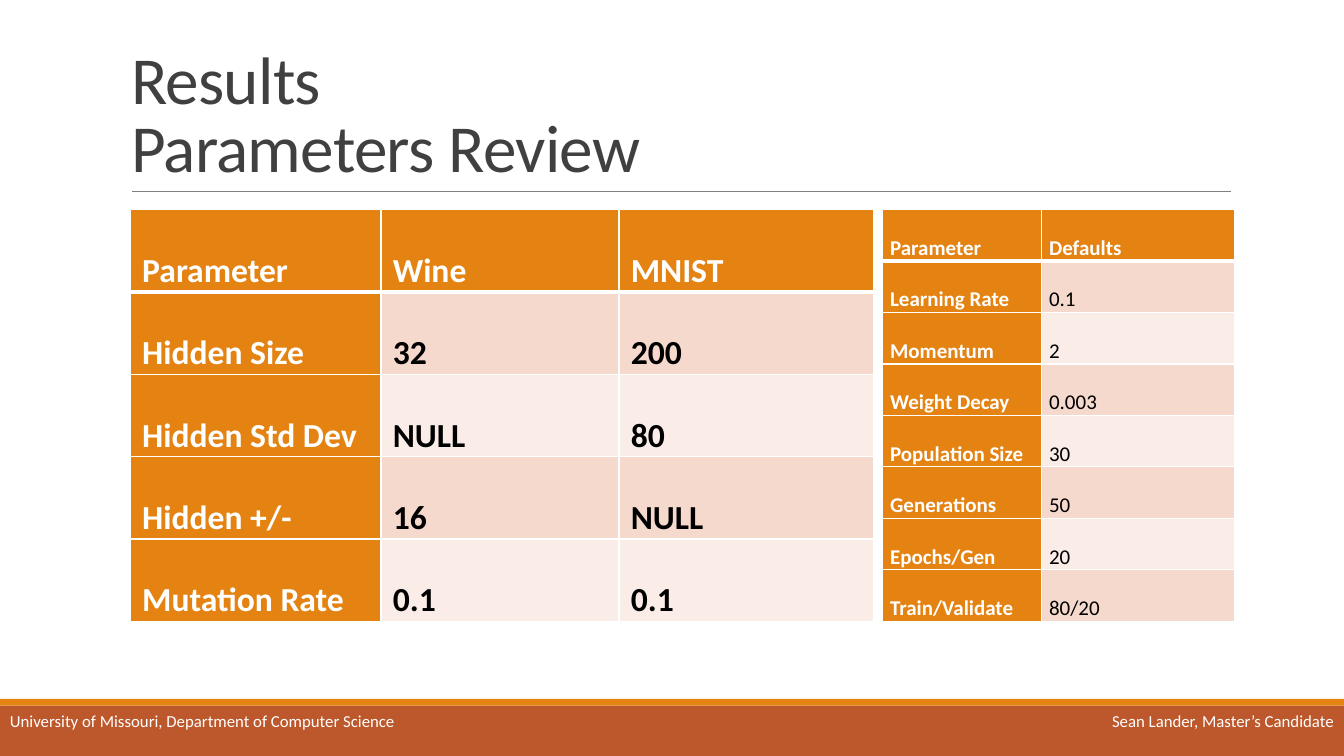
from lxml import etree
from pptx import Presentation
from pptx.dml.color import RGBColor
from pptx.enum.shapes import MSO_CONNECTOR, MSO_SHAPE
from pptx.enum.text import MSO_ANCHOR, MSO_AUTO_SIZE, PP_ALIGN
from pptx.oxml.ns import qn
from pptx.util import Pt

# Content
TITLE_LINES = ["Results", "Parameters Review"]
FOOTER_LEFT = "University of Missouri, Department of Computer Science"
FOOTER_RIGHT = "Sean Lander, Master’s Candidate"
TUNED_ROWS = [
    ("Parameter", "Wine", "MNIST"),
    ("Hidden Size", "32", "200"),
    ("Hidden Std Dev", "NULL", "80"),
    ("Hidden +/-", "16", "NULL"),
    ("Mutation Rate", "0.1", "0.1"),
]
DEFAULT_ROWS = [
    ("Parameter", "Defaults"),
    ("Learning Rate", "0.1"),
    ("Momentum", "2"),
    ("Weight Decay", "0.003"),
    ("Population Size", "30"),
    ("Generations", "50"),
    ("Epochs/Gen", "20"),
    ("Train/Validate", "80/20"),
]

# Style
FONT = "Calibri"
WHITE = RGBColor(0xFF, 0xFF, 0xFF)
BLACK = RGBColor(0x00, 0x00, 0x00)
TITLE_GRAY = RGBColor(0x40, 0x40, 0x40)
RULE_GRAY = RGBColor(0x80, 0x80, 0x80)
ORANGE = RGBColor(0xE4, 0x83, 0x12)
RUST = RGBColor(0xBD, 0x58, 0x2C)
BANDS = (RGBColor(0xFA, 0xED, 0xE7), RGBColor(0xF5, 0xD9, 0xCC))
LEFT, RIGHT, JUSTIFY = PP_ALIGN.LEFT, PP_ALIGN.RIGHT, PP_ALIGN.JUSTIFY
TOP, BOTTOM = MSO_ANCHOR.TOP, MSO_ANCHOR.BOTTOM

SLIDE_WIDTH, SLIDE_HEIGHT = 960, 540
FOOTER_TOP, STRIPE_HEIGHT = 504, 4.8
TABLE_TOP, TABLE_HEIGHT = 149.8, 294


def add_run(paragraph, text, size, color, bold=False):
    run = paragraph.add_run()
    run.text = text
    run.font.name = FONT
    run.font.size = Pt(size)
    run.font.bold = bold
    run.font.color.rgb = color
    return run


def add_band(slide, top, height, color):
    band = slide.shapes.add_shape(
        MSO_SHAPE.RECTANGLE, 0, Pt(top), Pt(SLIDE_WIDTH), Pt(height))
    band.shadow.inherit = False
    band.fill.solid()
    band.fill.fore_color.rgb = color
    band.line.fill.background()


def add_footer(slide, text, left, width, alignment):
    box = slide.shapes.add_textbox(
        Pt(left), Pt(FOOTER_TOP), Pt(width), Pt(SLIDE_HEIGHT - FOOTER_TOP))
    box.text_frame.word_wrap = True
    paragraph = box.text_frame.paragraphs[0]
    paragraph.alignment = alignment
    add_run(paragraph, text, 12, WHITE)


def set_borders(cell, top, bottom):
    properties = cell._tc.get_or_add_tcPr()
    widths = {"a:lnL": 1, "a:lnR": 1, "a:lnT": top, "a:lnB": bottom}
    for position, (tag, width) in enumerate(widths.items()):
        line = etree.Element(qn(tag), w=str(Pt(width)))
        fill = etree.SubElement(line, qn("a:solidFill"))
        etree.SubElement(fill, qn("a:srgbClr"), val=str(WHITE))
        properties.insert(position, line)


def add_parameter_table(slide, rows, left, column_widths, size, inset, bold_values):
    frame = slide.shapes.add_table(
        len(rows), len(column_widths), Pt(left), Pt(TABLE_TOP),
        Pt(sum(column_widths)), Pt(TABLE_HEIGHT))
    table = frame.table
    for column, width in zip(table.columns, column_widths):
        column.width = Pt(width)
    for row_index, values in enumerate(rows):
        table.rows[row_index].height = Pt(TABLE_HEIGHT / len(rows))
        for column_index, value in enumerate(values):
            cell = table.cell(row_index, column_index)
            is_header = row_index == 0 or column_index == 0
            cell.margin_left = cell.margin_right = Pt(inset)
            cell.margin_top = cell.margin_bottom = 0
            cell.vertical_anchor = TOP
            cell.fill.solid()
            cell.fill.fore_color.rgb = ORANGE if is_header else BANDS[row_index % 2]
            set_borders(cell, 3 if row_index == 1 else 1, 3 if row_index == 0 else 1)
            paragraph = cell.text_frame.paragraphs[0]
            paragraph.alignment = JUSTIFY
            paragraph.line_spacing = 2.0
            add_run(paragraph, value, size, WHITE if is_header else BLACK,
                    is_header or bold_values)


def main():
    presentation = Presentation()
    presentation.slide_width = Pt(SLIDE_WIDTH)
    presentation.slide_height = Pt(SLIDE_HEIGHT)
    slide = presentation.slides.add_slide(presentation.slide_layouts[5])

    # Footer bands and title rule
    add_band(slide, FOOTER_TOP, SLIDE_HEIGHT - FOOTER_TOP, RUST)
    add_band(slide, FOOTER_TOP - STRIPE_HEIGHT, STRIPE_HEIGHT, ORANGE)
    rule = slide.shapes.add_connector(
        MSO_CONNECTOR.STRAIGHT, Pt(94.2), Pt(136.8), Pt(879), Pt(136.8))
    rule.line.color.rgb = RULE_GRAY
    rule.line.width = Pt(0.5)
    etree.SubElement(rule._element.spPr, qn("a:effectLst"))

    # Footer text
    add_footer(slide, FOOTER_RIGHT, SLIDE_WIDTH / 2, SLIDE_WIDTH / 2, RIGHT)
    add_footer(slide, FOOTER_LEFT, 0, 424, LEFT)

    # Title
    title = slide.shapes.title
    title.left, title.top, title.width, title.height = Pt(86.4), Pt(22.5), Pt(792), Pt(114.3)
    title.text_frame.word_wrap = True
    title.text_frame.auto_size = MSO_AUTO_SIZE.NONE
    title.text_frame.vertical_anchor = BOTTOM
    paragraph = title.text_frame.paragraphs[0]
    paragraph.alignment = LEFT
    paragraph.line_spacing = 0.85
    for index, text in enumerate(TITLE_LINES):
        if index:
            paragraph.add_line_break()
        run = add_run(paragraph, text, 48, TITLE_GRAY)
        run.font._element.set("spc", "-50")

    # Parameter tables
    add_parameter_table(slide, TUNED_ROWS, 93.2, (179, 170, 182), 24, 8.4, True)
    add_parameter_table(slide, DEFAULT_ROWS, 630.2, (113.6, 138), 15, 5.6, False)

    presentation.save("out.pptx")


if __name__ == "__main__":
    main()
